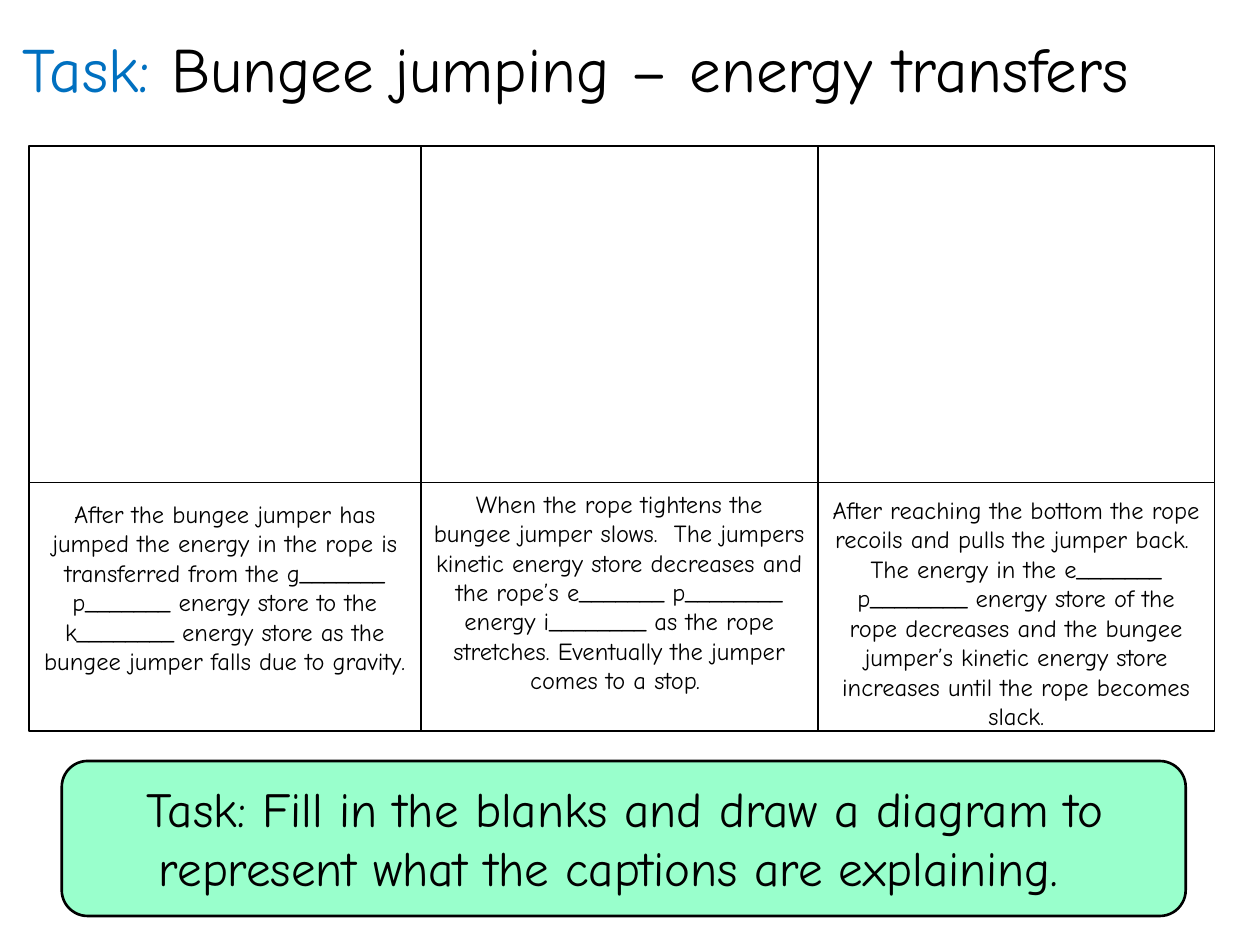
"""Build a bungee jumping energy transfers worksheet slide."""
from pptx import Presentation
from pptx.dml.color import RGBColor
from pptx.enum.shapes import MSO_SHAPE as SHAPE
from pptx.enum.text import MSO_ANCHOR as ANCHOR, PP_ALIGN as ALIGN
from pptx.util import Inches, Pt

FONT = "Comic Neue"
BLACK = RGBColor(0x00, 0x00, 0x00)
WHITE = RGBColor(0xFF, 0xFF, 0xFF)
BLUE = RGBColor(0x00, 0x70, 0xC0)
MINT = RGBColor(0x99, 0xFF, 0xCC)

TITLE = [("Task:", BLUE), (" Bungee jumping – energy transfers", BLACK)]
CAPTIONS = [
    (0.21, 3.91, 1.75,
     "After the bungee jumper has jumped the energy in the rope is transferred "
     "from the g_______ p_______ energy store to the k________ energy store "
     "as the bungee jumper falls due to gravity."),
    (3.34, 3.83, 1.99,
     "When the rope tightens the bungee jumper slows.  The jumpers kinetic "
     "energy store decreases and the rope’s e_______ p________ energy "
     "i________ as the rope stretches. Eventually the jumper comes to a stop. "),
    (6.49, 3.88, 1.99,
     "After reaching the bottom the rope recoils and pulls the jumper back.  "
     "The energy in the e_______ p________ energy store of the rope decreases "
     "and the bungee jumper’s kinetic energy store increases until the rope "
     "becomes slack."),
]
TASK = ("Task: Fill in the blanks and draw a diagram to represent what the "
        "captions are explaining.  ")
COLUMNS = [(0.23, 3.11), (3.34, 3.15), (6.49, 3.15)]
ROWS = [(1.16, 2.67), (3.83, 1.97)]


def add_box(s, kind, x, y, w, h, fill, line):
    sp = s.shapes.add_shape(kind, Inches(x), Inches(y), Inches(w), Inches(h))
    sp.shadow.inherit = False
    sp.fill.solid()
    sp.fill.fore_color.rgb = fill
    sp.line.color.rgb = BLACK
    sp.line.width = Pt(line)


def add_text(s, x, y, w, h, runs, size, align=ALIGN.CENTER):
    sp = s.shapes.add_textbox(Inches(x), Inches(y), Inches(w), Inches(h))
    tf = sp.text_frame
    tf.word_wrap = True
    tf.vertical_anchor = ANCHOR.TOP
    p = tf.paragraphs[0]
    p.alignment = align
    for text, color in runs:
        r = p.add_run()
        r.text = text
        r.font.name = FONT
        r.font.size = Pt(size)
        r.font.color.rgb = color
    return p


def main():
    prs = Presentation()
    prs.slide_width, prs.slide_height = Inches(10), Inches(7.5)
    s = prs.slides.add_slide(prs.slide_layouts[6])

    add_box(s, SHAPE.ROUNDED_RECTANGLE, 0.49, 6.04, 8.92, 1.23, MINT, 1.5)
    p = add_text(s, 0.08, 0.25, 9.74, 4.76, TITLE, 36, ALIGN.LEFT)
    p.line_spacing = 0.9
    p.space_before = Pt(10)

    for y, h in ROWS:
        for x, w in COLUMNS:
            add_box(s, SHAPE.RECTANGLE, x, y, w, h, WHITE, 1)
    for x, y, h, caption in CAPTIONS:
        add_text(s, x, y, 3.15, h, [(caption, BLACK)], 14)
    add_text(s, 0.5, 6.13, 8.92, 1.04, [(TASK, BLACK)], 28)

    prs.save("out.pptx")


if __name__ == "__main__":
    main()
